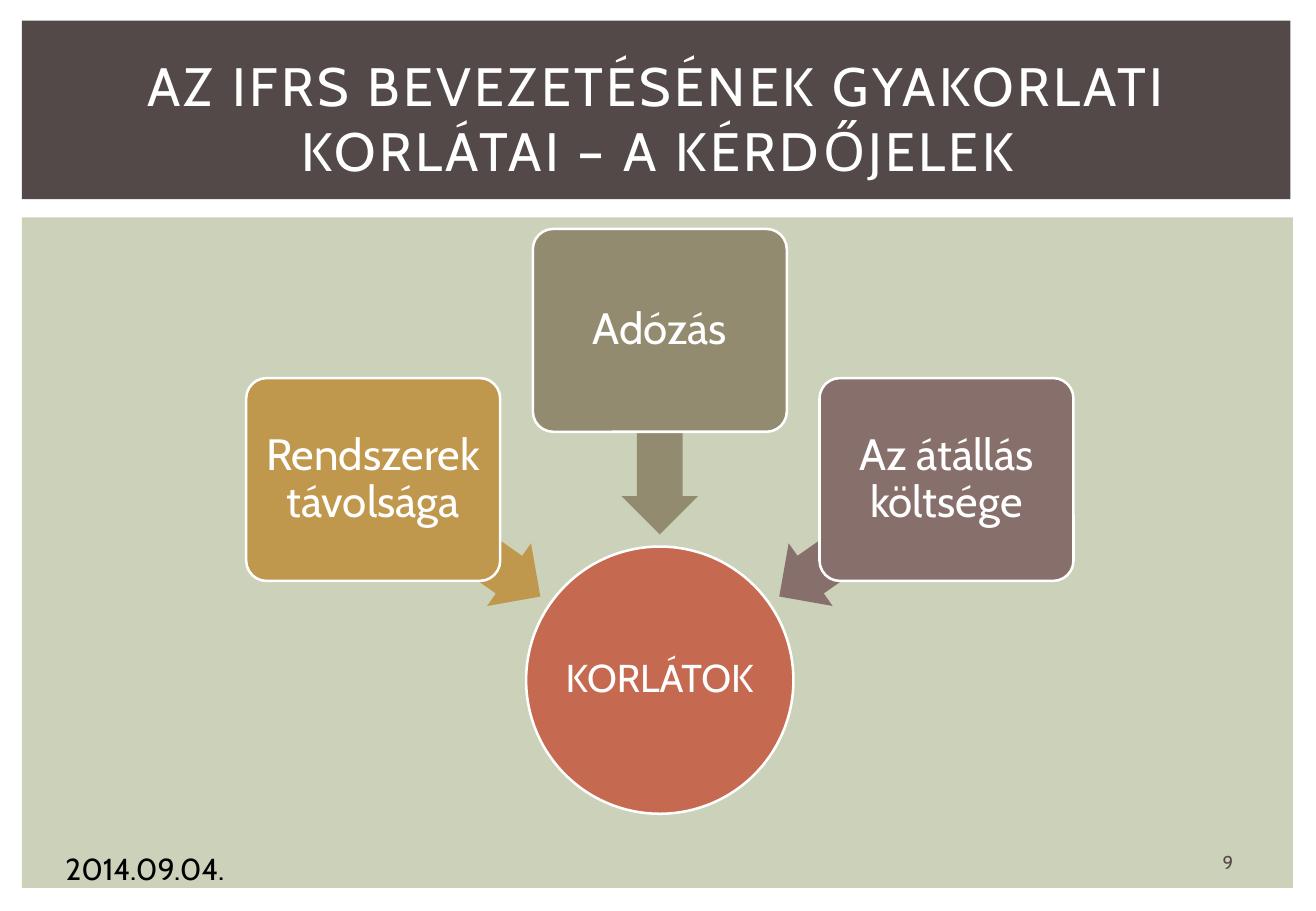
"""Build the slide on the practical limits of introducing IFRS."""
import dataclasses
import math

import pptx
import pptx.dml.color
import pptx.enum.shapes
import pptx.enum.text
import pptx.shapes.autoshape
import pptx.slide
import pptx.util

Inches = pptx.util.Inches
RGBColor = pptx.dml.color.RGBColor
Shape = pptx.shapes.autoshape.Shape
ShapeType = pptx.enum.shapes.MSO_SHAPE
Align = pptx.enum.text.PP_ALIGN
Anchor = pptx.enum.text.MSO_ANCHOR

WHITE = RGBColor(0xFF, 0xFF, 0xFF)
BLACK = RGBColor(0x00, 0x00, 0x00)
SAGE = RGBColor(0xCC, 0xD1, 0xB9)
UMBER = RGBColor(0x53, 0x49, 0x49)
TERRACOTTA = RGBColor(0xC6, 0x69, 0x51)
OCHRE = RGBColor(0xBF, 0x97, 0x4D)
OLIVE = RGBColor(0x92, 0x8B, 0x70)
MAUVE = RGBColor(0x87, 0x70, 0x6B)

FONT = "Cabin"
HUB_X, HUB_Y = 5.43, 5.6
HUB_SIZE = 2.2
ARROW_DISTANCE, ARROW_SIZE = 2.04, (1.68, 0.63)
BOX_DISTANCE, BOX_SIZE = 2.88, (2.09, 1.67)


@dataclasses.dataclass(frozen=True)
class Area:
    left: float
    top: float
    width: float
    height: float

    def lengths(self) -> list[int]:
        return [Inches(value) for value in dataclasses.astuple(self)]


@dataclasses.dataclass(frozen=True)
class Limit:
    text: str
    angle: int
    color: RGBColor


@dataclasses.dataclass(frozen=True)
class TextStyle:
    size: int
    color: RGBColor = WHITE
    align: Align = Align.CENTER
    anchor: Anchor = Anchor.MIDDLE
    inset: tuple[float, float] = (0.1, 0.05)
    line_spacing: float = 1.0
    wrap: bool = True


LIMITS = [
    Limit("Rendszerek távolsága", 215, OCHRE),
    Limit("Adózás", 270, OLIVE),
    Limit("Az átállás költsége", 325, MAUVE),
]
PANELS = [
    (Area(0.18, 1.79, 10.46, 5.52), SAGE),
    (Area(0.18, 0.17, 10.44, 1.47), UMBER),
]
LIMIT_STYLE = TextStyle(26, inset=(0.05, 0.05), line_spacing=0.9)
HUB_STYLE = TextStyle(23, inset=(0.02, 0.02), line_spacing=0.9, wrap=False)


def apply_format(target: object, values: dict[str, object]) -> None:
    for name, value in values.items():
        setattr(target, name, value)


def around_hub(angle: int, distance: float, size: tuple[float, float]) -> Area:
    width, height = size
    x = HUB_X + distance * math.cos(math.radians(angle))
    y = HUB_Y + distance * math.sin(math.radians(angle))
    return Area(x - width / 2, y - height / 2, width, height)


def write_text(shape: Shape, text: str, style: TextStyle) -> None:
    frame = shape.text_frame
    frame.text = text
    horizontal, vertical = map(Inches, style.inset)
    apply_format(frame, {
        "auto_size": pptx.enum.text.MSO_AUTO_SIZE.NONE,
        "word_wrap": style.wrap,
        "vertical_anchor": style.anchor,
        "margin_left": horizontal,
        "margin_right": horizontal,
        "margin_top": vertical,
        "margin_bottom": vertical,
    })
    paragraph = frame.paragraphs[0]
    apply_format(paragraph, {"alignment": style.align, "line_spacing": style.line_spacing})
    font = paragraph.runs[0].font
    apply_format(font, {"name": FONT, "size": pptx.util.Pt(style.size)})
    font.color.rgb = style.color


def add_filled(slide: pptx.slide.Slide, kind: ShapeType, area: Area,
               color: RGBColor, outlined: bool = False) -> Shape:
    shape = slide.shapes.add_shape(kind, *area.lengths())
    shape.shadow.inherit = False
    shape.fill.solid()
    shape.fill.fore_color.rgb = color
    if outlined:
        shape.line.color.rgb = WHITE
        shape.line.width = pptx.util.Pt(1.5)
    else:
        shape.line.fill.background()
    return shape


def add_limit(slide: pptx.slide.Slide, limit: Limit) -> None:
    arrow = add_filled(slide, ShapeType.LEFT_ARROW,
                       around_hub(limit.angle, ARROW_DISTANCE, ARROW_SIZE), limit.color)
    arrow.rotation = limit.angle
    arrow.adjustments[0] = 0.6
    box = add_filled(slide, ShapeType.ROUNDED_RECTANGLE,
                     around_hub(limit.angle, BOX_DISTANCE, BOX_SIZE), limit.color, True)
    box.adjustments[0] = 0.1
    write_text(box, limit.text, LIMIT_STYLE)


def add_label(slide: pptx.slide.Slide, text: str, area: Area, style: TextStyle) -> None:
    write_text(slide.shapes.add_textbox(*area.lengths()), text, style)


def place_title(slide: pptx.slide.Slide, text: str, area: Area) -> None:
    title = slide.shapes.title
    apply_format(title, dict(zip(("left", "top", "width", "height"), area.lengths())))
    write_text(title, text, TextStyle(32))
    run = title.text_frame.paragraphs[0].runs[0]
    run.font._element.set("spc", "200")
    title.element.getparent().append(title.element)


def main() -> None:
    presentation = pptx.Presentation()
    apply_format(presentation, {"slide_width": Inches(10.83), "slide_height": Inches(7.5)})
    slide = presentation.slides.add_slide(presentation.slide_layouts[5])
    for area, color in PANELS:
        add_filled(slide, ShapeType.RECTANGLE, area, color)
    hub_area = around_hub(0, 0, (HUB_SIZE, HUB_SIZE))
    hub = add_filled(slide, ShapeType.OVAL, hub_area, TERRACOTTA, True)
    write_text(hub, "KORLÁTOK", HUB_STYLE)
    for limit in LIMITS:
        add_limit(slide, limit)
    add_label(slide, "2014.09.04.", Area(0.44, 6.95, 2.53, 0.3),
              TextStyle(18, BLACK, Align.LEFT, Anchor.TOP))
    add_label(slide, "9", Area(9.76, 6.95, 0.69, 0.3), TextStyle(11, UMBER))
    place_title(slide, "AZ IFRS BEVEZETÉSÉNEK GYAKORLATI KORLÁTAI – A KÉRDŐJELEK",
                Area(0.45, 0.39, 9.93, 1.15))
    presentation.save("out.pptx")


if __name__ == "__main__":
    main()
